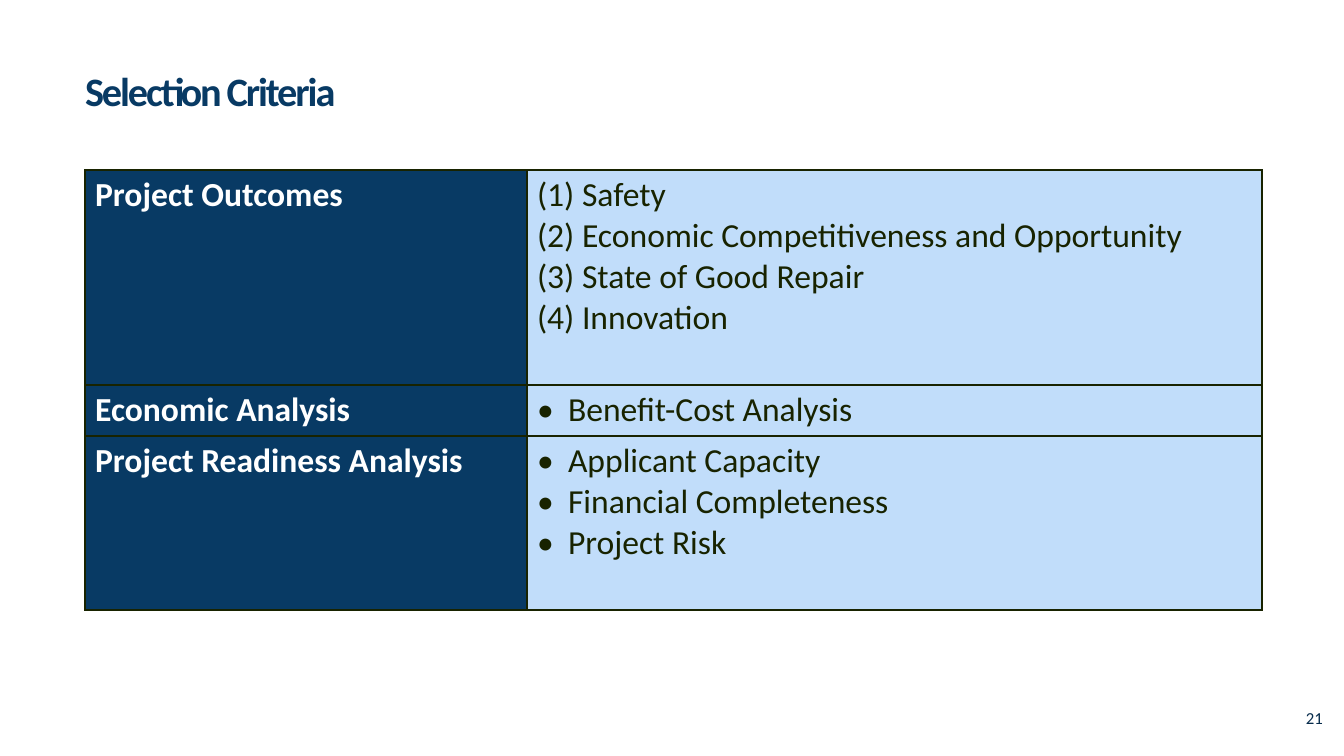
"""Build the Selection Criteria slide with its three-row table."""
from typing import NamedTuple

from lxml.etree import SubElement
from pptx import Presentation
from pptx.dml.color import RGBColor
from pptx.enum.text import MSO_ANCHOR, MSO_AUTO_SIZE, PP_ALIGN
from pptx.oxml.ns import qn
from pptx.util import Emu, Pt

COLORS = {"navy": "083A64", "number": "062B4B", "ink": "182300",
          "pale": "C1DDFA", "white": "FFFFFF"}
FONT = "Calibri"
BORDER_PT = 1


class Box(NamedTuple):
    left: int
    top: int
    width: int
    height: int


class ListStyle(NamedTuple):
    indent: int
    tag: str
    attrs: dict[str, str]


class Criterion(NamedTuple):
    name: str
    items: list[str]
    style: ListStyle
    height: int


NUMBERED = ListStyle(45, "a:buAutoNum", {"type": "arabicParenBoth"})
BULLETED = ListStyle(31, "a:buChar", {"char": "•"})
CRITERIA = [
    Criterion("Project Outcomes",
              ["Safety", "Economic Competitiveness and Opportunity",
               "State of Good Repair", "Innovation"], NUMBERED, 215),
    Criterion("Economic Analysis", ["Benefit-Cost Analysis"], BULLETED, 51),
    Criterion("Project Readiness Analysis",
              ["Applicant Capacity", "Financial Completeness", "Project Risk"],
              BULLETED, 174),
]
COLUMNS = [442, 735]
TITLE = Box(85, 75, 824, 36)
TABLE = Box(85, 170, sum(COLUMNS), sum(c.height for c in CRITERIA))
NUMBER = Box(1296, 703, 48, 47)


def px(n: int) -> Emu:
    return Emu(round(n * 914400 / 100.8))


def rgb(name: str) -> RGBColor:
    return RGBColor.from_string(COLORS[name])


def place(box: Box) -> list[Emu]:
    return [px(n) for n in box]


def add_run(p, text: str, size: float, color: str, bold: bool = False):
    r = p.add_run()
    r.text = text
    for key, value in {"name": FONT, "size": Pt(size), "bold": bold}.items():
        setattr(r.font, key, value)
    r.font.color.rgb = rgb(color)
    return r


def set_list(p, style: ListStyle) -> None:
    pPr = p._p.get_or_add_pPr()
    pPr.set("marL", str(px(style.indent)))
    pPr.set("indent", str(-px(style.indent)))
    SubElement(pPr, qn("a:buFont"), typeface=FONT)
    SubElement(pPr, qn(style.tag), style.attrs)


def fill_cell(cell, fill: str, lines: list[str], color: str, bold: bool,
              style: ListStyle | None = None) -> None:
    tcPr = cell._tc.get_or_add_tcPr()
    for side in "LRTB":
        ln = SubElement(tcPr, qn(f"a:ln{side}"), w=str(Pt(BORDER_PT)))
        solid = SubElement(ln, qn("a:solidFill"))
        SubElement(solid, qn("a:srgbClr"), val=COLORS["ink"])
    cell.fill.solid()
    cell.fill.fore_color.rgb = rgb(fill)
    tf = cell.text_frame
    for i, line in enumerate(lines):
        p = tf.add_paragraph() if i else tf.paragraphs[0]
        if style:
            set_list(p, style)
        add_run(p, line, 24, color, bold)


def add_title(s) -> None:
    sp = s.shapes.title
    sp.left, sp.top, sp.width, sp.height = place(TITLE)
    tf = sp.text_frame
    formats = {"margin_left": 0, "margin_top": 0, "margin_right": 0,
               "margin_bottom": 0, "word_wrap": True,
               "auto_size": MSO_AUTO_SIZE.NONE,
               "vertical_anchor": MSO_ANCHOR.MIDDLE}
    for key, value in formats.items():
        setattr(tf, key, value)
    p = tf.paragraphs[0]
    p.alignment = PP_ALIGN.LEFT
    p.line_spacing = 0.9
    r = add_run(p, "Selection Criteria", 28.8, "navy", True)
    r._r.get_or_add_rPr().set("spc", "-150")


def add_criteria(s) -> None:
    table = s.shapes.add_table(len(CRITERIA), len(COLUMNS), *place(TABLE)).table
    table.first_row = table.horz_banding = False
    for column, width in zip(table.columns, COLUMNS):
        column.width = px(width)
    for row, c in zip(table.rows, CRITERIA):
        row.height = px(c.height)
        fill_cell(row.cells[0], "navy", [c.name], "white", True)
        fill_cell(row.cells[1], "pale", c.items, "ink", False, c.style)


def add_number(s) -> None:
    tf = s.shapes.add_textbox(*place(NUMBER)).text_frame
    tf.word_wrap = True
    add_run(tf.paragraphs[0], "21", 12, "number")


def main() -> None:
    prs = Presentation()
    prs.slide_width, prs.slide_height = px(1344), px(756)
    s = prs.slides.add_slide(prs.slide_layouts[5])
    add_title(s)
    add_number(s)
    add_criteria(s)
    prs.save("out.pptx")


if __name__ == "__main__":
    main()
